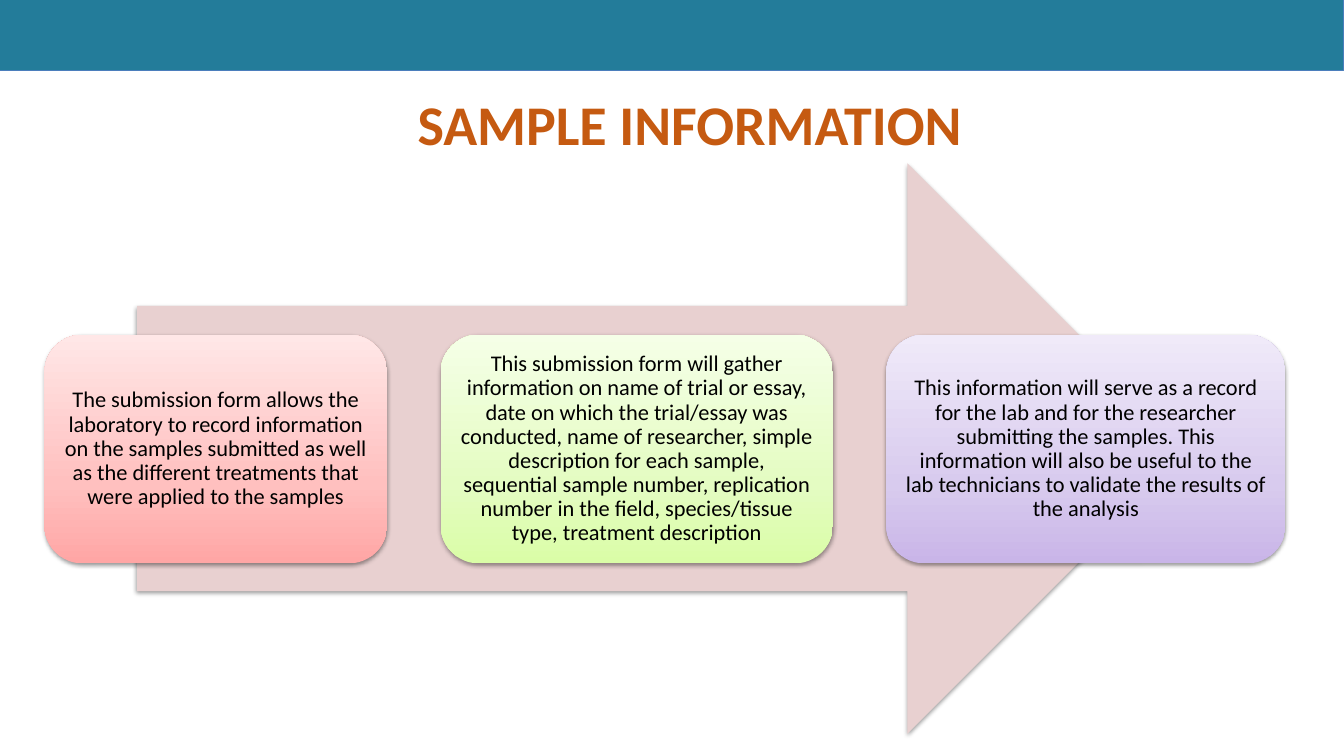
from lxml import etree
from pptx import Presentation
from pptx.dml.color import RGBColor
from pptx.enum.shapes import MSO_SHAPE
from pptx.enum.text import MSO_ANCHOR, PP_ALIGN
from pptx.oxml.ns import qn
from pptx.util import Inches, Pt

RECTANGLE = MSO_SHAPE.RECTANGLE
RIGHT_ARROW = MSO_SHAPE.RIGHT_ARROW
ROUNDED = MSO_SHAPE.ROUNDED_RECTANGLE
CENTER = PP_ALIGN.CENTER
MIDDLE = MSO_ANCHOR.MIDDLE

# Content
TITLE = "SAMPLE INFORMATION"
CARDS = [  # text, width, gradient colours from bottom to top
    ("The submission form allows the laboratory to record information on the "
     "samples submitted as well as the different treatments that were applied "
     "to the samples",
     3.4, ("FFA6A5", "FFC0BF", "FFE7E7")),
    ("This submission form will gather information on name of trial or essay, "
     "date on which the trial/essay was conducted, name of researcher, simple "
     "description for each sample, sequential sample number, replication number "
     "in the field, species/tissue type, treatment description",
     3.89, ("DAFDA7", "E4FCC2", "F5FFE7")),
    ("This information will serve as a record for the lab and for the researcher "
     "submitting the samples. This information will also be useful to the lab "
     "technicians to validate the results of the analysis",
     3.96, ("C9B5E8", "D8CBEE", "F0EAF9")),
]

# Layout and formats
CARD_LEFT, CARD_TOP, CARD_HEIGHT, CARD_GAP = 0.44, 3.32, 2.27, 0.53
CARD_INSET = 0.07
GRADIENT_STOPS = (0, 35, 100)
TITLE_FONT = {"name": "Calibri", "size": Pt(40), "bold": True}
CARD_FONT = {"name": "Calibri", "size": Pt(16)}


def color(hex_value):
    return RGBColor.from_string(hex_value)


def add_shape(kind, left, top, width, height, fill=None):
    shape = slide.shapes.add_shape(
        kind, Inches(left), Inches(top), Inches(width), Inches(height))
    shape.shadow.inherit = False
    shape.line.fill.background()
    if fill:
        shape.fill.solid()
        shape.fill.fore_color.rgb = color(fill)
    return shape


def add_color_xml(parent, hex_value):
    return etree.SubElement(parent, qn("a:srgbClr"), val=hex_value)


def add_shadow(shape):
    effects = shape._element.spPr.find(qn("a:effectLst"))
    shadow = etree.SubElement(
        effects, qn("a:outerShdw"), blurRad=str(Pt(3.1)), dist=str(Pt(1.6)),
        dir="5400000", rotWithShape="0")
    etree.SubElement(add_color_xml(shadow, "000000"), qn("a:alpha"), val="38000")


def set_gradient(shape, hex_values):
    shape.fill.gradient()
    shape.fill.gradient_angle = 90
    stops = shape._element.spPr.find(qn("a:gradFill")).find(qn("a:gsLst"))
    for stop in list(stops):
        stops.remove(stop)
    for position, hex_value in zip(GRADIENT_STOPS, hex_values):
        stop = etree.SubElement(stops, qn("a:gs"), pos=str(position * 1000))
        add_color_xml(stop, hex_value)


def write_text(frame, text, font, hex_value):
    frame.word_wrap = True
    paragraph = frame.paragraphs[0]
    paragraph.alignment = CENTER
    run = paragraph.add_run()
    run.text = text
    for name, value in font.items():
        setattr(run.font, name, value)
    run.font.color.rgb = color(hex_value)
    return paragraph


presentation = Presentation()
presentation.slide_width = Inches(13.33)
presentation.slide_height = Inches(7.5)
slide = presentation.slides.add_slide(presentation.slide_layouts[6])

# Top band
band = add_shape(RECTANGLE, 0, 0, 13.33, 0.7, "237C9A")
band.line.color.rgb = color("4B7EBC")
band.line.width = Pt(0.75)

# Title
title = slide.shapes.add_textbox(
    Inches(0.79), Inches(0.84), Inches(12.1), Inches(0.77))
write_text(title.text_frame, TITLE, TITLE_FONT, "C55A11")

# Arrow behind the cards
add_shadow(add_shape(RIGHT_ARROW, 1.36, 1.62, 10.47, 5.66, "E8D0D0"))

# Cards, left to right with equal gaps
left = CARD_LEFT
for text, width, gradient in CARDS:
    card = add_shape(ROUNDED, left, CARD_TOP, width, CARD_HEIGHT)
    set_gradient(card, gradient)
    add_shadow(card)
    frame = card.text_frame
    frame.vertical_anchor = MIDDLE
    for side in ("left", "top", "right", "bottom"):
        setattr(frame, f"margin_{side}", Inches(CARD_INSET))
    write_text(frame, text, CARD_FONT, "000000").line_spacing = 0.9
    left += width + CARD_GAP

presentation.save("out.pptx")
